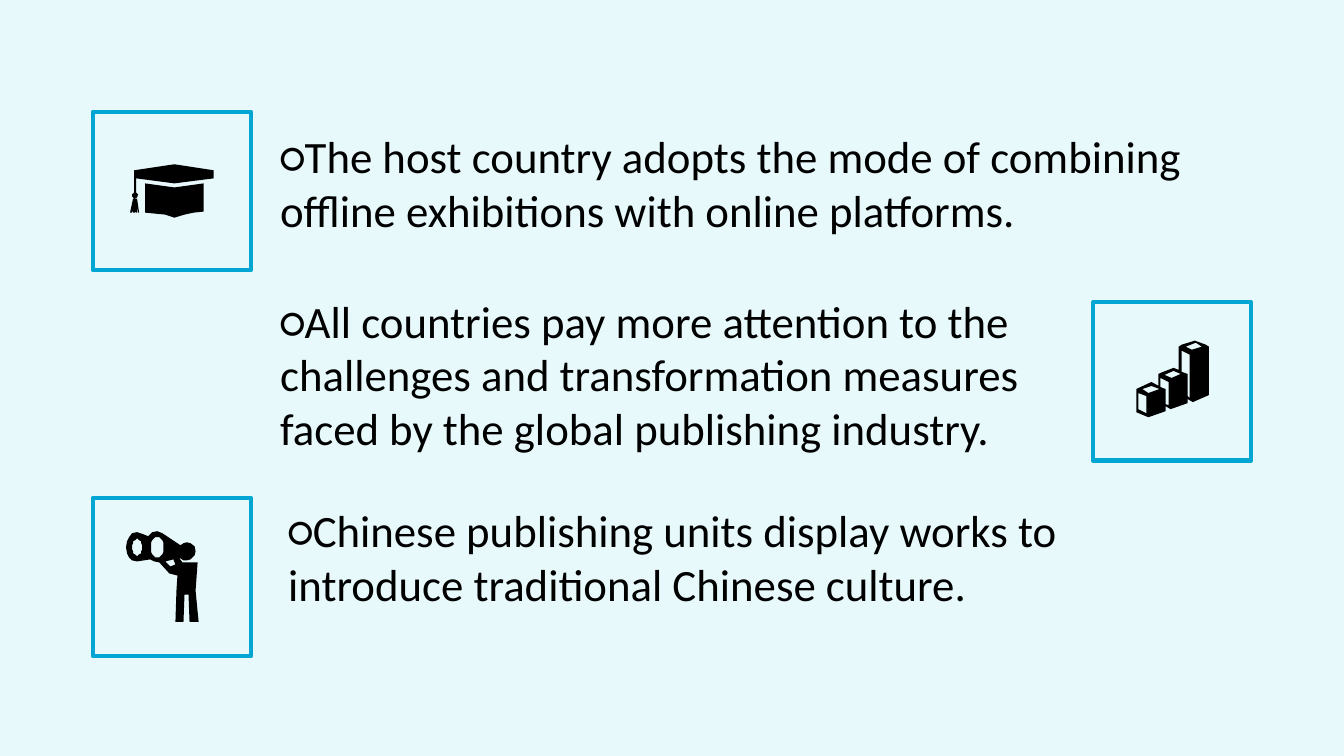
from math import cos, pi, sin

from pptx import Presentation
from pptx.dml.color import RGBColor
from pptx.enum.shapes import MSO_SHAPE as SHAPE
from pptx.enum.text import MSO_ANCHOR as ANCHOR
from pptx.util import Inches, Pt

WIDTH, HEIGHT = 13.33, 7.5
FRAME = 1.57
LEFT_COL, RIGHT_COL = 0.92, 10.84
TEXT_COL = 2.68
UNIT = Inches(0.01)  # icon outlines are in hundredths of an inch inside their frame
PALE, CYAN, BLACK = "E7F9FB", "03A5D3", "000000"


def ellipse(cx, cy, rx, ry, steps=24):
    angles = [2 * pi * i / steps for i in range(steps)]
    return [(cx + rx * cos(a), cy + ry * sin(a)) for a in angles]


CAP = [
    # crown
    [(52, 100), (62, 101), (72, 102), (81, 105), (91, 102), (100, 100),
     (110, 99), (110, 71), (81, 75), (52, 71)],
    # board and cord
    [(120, 58), (120, 66), (81, 71), (43, 66), (43, 80), (45, 82), (44, 85),
     (41, 86), (39, 84), (39, 82), (41, 80), (41, 58), (81, 52)],
    # tassel
    [(44, 86), (40, 86), (37, 100), (39, 100), (40, 98), (40, 100), (42, 100),
     (43, 99), (43, 100), (44, 100), (44, 94), (45, 100), (46, 100)],
]
BARS = [
    # outer outline
    [(65, 71), (67, 70), (80, 65), (85, 67), (85, 44), (88, 42), (101, 38),
     (112, 42), (115, 44), (115, 92), (99, 99), (94, 96), (94, 100), (77, 106),
     (72, 103), (72, 108), (55, 114), (43, 109), (43, 86), (58, 79), (69, 85),
     (72, 86), (72, 101), (75, 102), (75, 79), (67, 75), (67, 84), (65, 83)],
    # open tops
    [(92, 44), (98, 47), (108, 44), (102, 40)],
    [(71, 72), (78, 75), (87, 71), (80, 68)],
    [(49, 86), (55, 90), (66, 86), (58, 83)],
    # open sides
    [(53, 93), (45, 90), (45, 106), (53, 110)],
    [(88, 69), (94, 71), (94, 93), (96, 95), (96, 52), (88, 48)],
]
WATCHER = [
    # figure with binoculars
    [(64, 33), (59, 34), (55, 38), (50, 36), (44, 34), (39, 35), (36, 39),
     (34, 43), (33, 49), (34, 55), (36, 59), (39, 62), (44, 63), (57, 61),
     (61, 63), (66, 64), (76, 75), (84, 77), (83, 92), (82, 123), (90, 123),
     (91, 96), (95, 96), (96, 123), (105, 123), (102, 92), (104, 64), (89, 64),
     (86, 60), (87, 60), (90, 62), (93, 62), (97, 61), (101, 57), (102, 53),
     (101, 48), (97, 45), (93, 44), (90, 45), (87, 47), (69, 35)],
    # lenses
    ellipse(44, 49, 5, 8.5),
    ellipse(64, 49, 6.5, 10),
    # gap under the arm
    [(82, 66), (77, 68), (72, 63), (80, 61)],
]

ICONS = [(CAP, LEFT_COL, 1.11), (BARS, RIGHT_COL, 3), (WATCHER, LEFT_COL, 4.94)]
POINTS = [
    ("○The host country adopts the mode of combining offline exhibitions "
     "with online platforms.", (TEXT_COL, 1.23, 9.65, 1.18)),
    ("○All countries pay more attention to the challenges and transformation "
     "measures faced by the global publishing industry.",
     (TEXT_COL, 2.86, 8.05, 1.72)),
    ("○Chinese publishing units display works to introduce traditional "
     "Chinese culture.", (TEXT_COL + 0.08, 4.94, 8.27, 1.72)),
]


def color(hex_string):
    return RGBColor.from_string(hex_string)


def style(sp, fill=None, line=None, weight=3):
    sp.shadow.inherit = False
    if fill:
        sp.fill.solid()
        sp.fill.fore_color.rgb = color(fill)
    else:
        sp.fill.background()
    if line:
        sp.line.color.rgb = color(line)
        sp.line.width = Pt(weight)
    else:
        sp.line.fill.background()


def add_rect(slide, box, **look):
    sp = slide.shapes.add_shape(SHAPE.RECTANGLE, *map(Inches, box))
    style(sp, **look)


def add_icon(slide, contours, left, top):
    """Draw a framed icon; inner contours become holes."""
    add_rect(slide, (left, top, FRAME, FRAME), line=CYAN)
    first, *others = contours
    builder = slide.shapes.build_freeform(*first[0], scale=UNIT)
    builder.add_line_segments(first[1:], close=True)
    for contour in others:
        builder.move_to(*contour[0])
        builder.add_line_segments(contour[1:], close=True)
    style(builder.convert_to_shape(Inches(left), Inches(top)), fill=BLACK)


def add_text(slide, text, box, size=32, font="Calibri", ink=BLACK):
    tf = slide.shapes.add_textbox(*map(Inches, box)).text_frame
    tf.word_wrap = True
    tf.vertical_anchor = ANCHOR.TOP
    r = tf.paragraphs[0].add_run()
    r.text = text
    r.font.size = Pt(size)
    r.font.name = font
    r.font.color.rgb = color(ink)


def main():
    prs = Presentation()
    prs.slide_width, prs.slide_height = Inches(WIDTH), Inches(HEIGHT)
    slide = prs.slides.add_slide(prs.slide_layouts[6])
    add_rect(slide, (0, 0, WIDTH, HEIGHT), fill=PALE)
    for contours, left, top in ICONS:
        add_icon(slide, contours, left, top)
    for text, box in POINTS:
        add_text(slide, text, box)
    prs.save("out.pptx")


if __name__ == "__main__":
    main()
